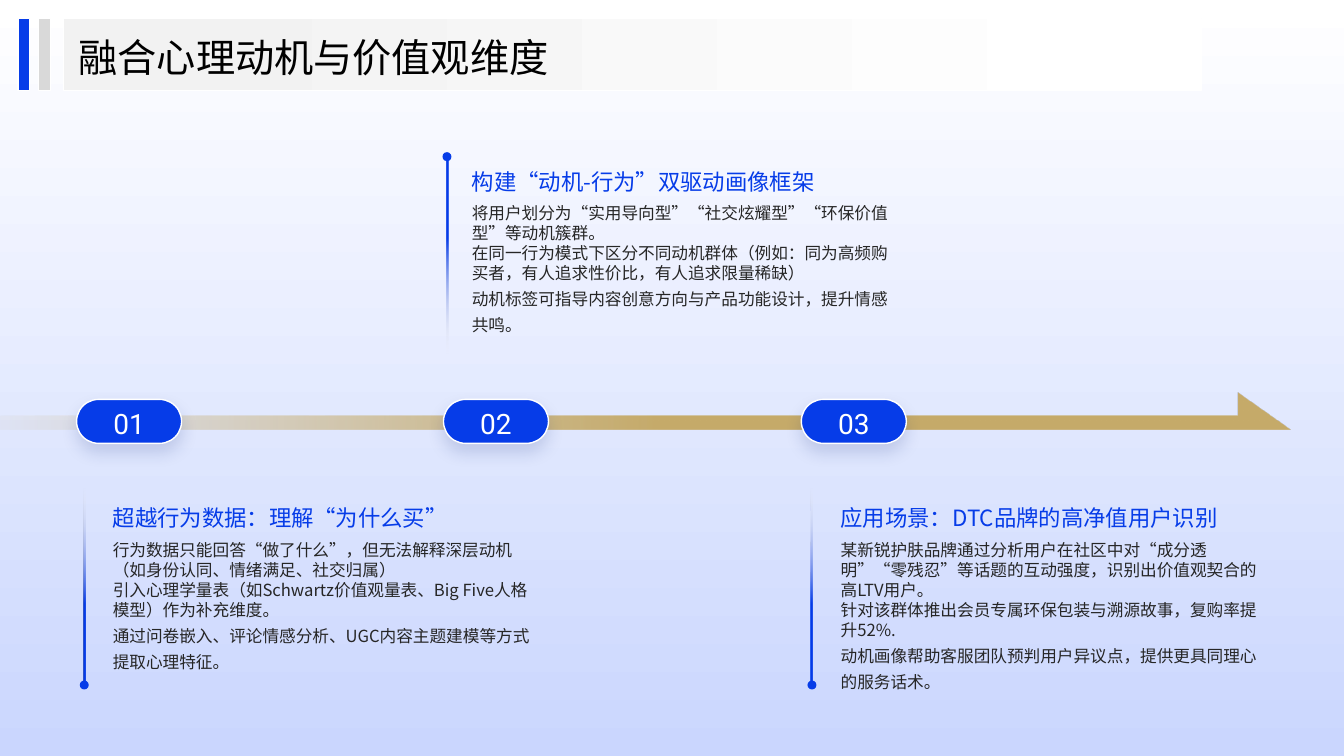
from lxml import etree
from pptx import Presentation
from pptx import util as u
from pptx.dml.color import RGBColor
from pptx.enum import shapes, text
from pptx.oxml.ns import qn

COLORS = {"blue": "063CE8", "gold": "C6AB6A", "white": "FFFFFF", "sky": "CAD6FE",
          "cream": "F4EEE1", "pale": "F2F2F2", "gray": "D9D9D9", "ink": "262626",
          "black": "000000", "shade": "031E74"}
HAN, NUM = "Noto Sans CJK SC", "Roboto"

STEPS = [
    ("01", 54.7, 60.2, 80.6, False, "超越行为数据：理解“为什么买”",
     ["行为数据只能回答“做了什么”，但无法解释深层动机（如身份认同、情绪满足、社交归属）",
      "引入心理学量表（如Schwartz价值观量表、Big Five人格模型）作为补充维度。",
      "通过问卷嵌入、评论情感分析、UGC内容主题建模等方式提取心理特征。"]),
    ("02", 316.8, 319.3, 337, True, "构建“动机-行为”双驱动画像框架",
     ["将用户划分为“实用导向型”“社交炫耀型”“环保价值型”等动机簇群。",
      "在同一行为模式下区分不同动机群体（例如：同为高频购买者，有人追求性价比，有人追求限量稀缺）",
      "动机标签可指导内容创意方向与产品功能设计，提升情感共鸣。"]),
    ("03", 572.4, 580, 600.5, False, "应用场景：DTC品牌的高净值用户识别",
     ["某新锐护肤品牌通过分析用户在社区中对“成分透明”“零残忍”等话题的互动强度，识别出价值观契合的高LTV用户。",
      "针对该群体推出会员专属环保包装与溯源故事，复购率提升52%.",
      "动机画像帮助客服团队预判用户异议点，提供更具同理心的服务话术。"]),
]


class Deck:
    """Draws styled elements on the current slide, with lengths in points."""

    def __init__(self, width, height):
        self.prs = Presentation()
        self.prs.slide_width, self.prs.slide_height = u.Pt(width), u.Pt(height)
        self.s = self.prs.slides.add_slide(self.prs.slide_layouts[6])

    def rgb(self, name):
        return RGBColor.from_string(COLORS[name])

    def paint(self, sp, fill, line=None):
        sp.shadow.inherit = False
        sp.fill.solid()
        sp.fill.fore_color.rgb = self.rgb(fill)
        if line:
            sp.line.color.rgb = self.rgb(line)
            sp.line.width = u.Pt(1)
        else:
            sp.line.fill.background()

    def shape(self, kind, x, y, w, h, fill, line=None):
        sp = self.s.shapes.add_shape(kind, u.Pt(x), u.Pt(y), u.Pt(w), u.Pt(h))
        self.paint(sp, fill, line)
        return sp

    def rect(self, x, y, w, h, fill, line=None):
        return self.shape(shapes.MSO_SHAPE.RECTANGLE, x, y, w, h, fill, line)

    def polygon(self, points, fill):
        pts = [(u.Pt(x), u.Pt(y)) for x, y in points]
        fb = self.s.shapes.build_freeform(*pts[0], scale=1.0)
        fb.add_line_segments(pts[1:], close=True)
        sp = fb.convert_to_shape()
        self.paint(sp, fill)
        return sp

    def gradient(self, sp, stops, angle=0, clear=None):
        sp.fill.gradient()
        sp.fill.gradient_angle = angle
        for i, (stop, (pos, color)) in enumerate(zip(sp.fill.gradient_stops, stops)):
            stop.position = pos
            stop.color.rgb = self.rgb(color)
            if i == clear:
                clr = sp.fill._xPr.findall(".//" + qn("a:srgbClr"))[i]
                etree.SubElement(clr, qn("a:alpha"), val="0")

    def pill(self, x, y, w, h):
        sp = self.shape(shapes.MSO_SHAPE.ROUNDED_RECTANGLE, x, y, w, h, "blue", "white")
        sp.adjustments[0] = 0.5
        effects = sp._element.spPr.find(qn("a:effectLst"))
        shadow = etree.SubElement(effects, qn("a:outerShdw"), blurRad=str(u.Pt(12)),
                                  dist=str(u.Pt(6)), dir="5400000", algn="t", rotWithShape="0")
        clr = etree.SubElement(shadow, qn("a:srgbClr"), val=COLORS["shade"])
        etree.SubElement(clr, qn("a:alpha"), val="15000")

    def label(self, x, y, w, h, lines, size, color, font=HAN, anchor="TOP",
              spacing=1.0, last=None, inset=True, center=False):
        tf = self.s.shapes.add_textbox(u.Pt(x), u.Pt(y), u.Pt(w), u.Pt(h)).text_frame
        tf.word_wrap = True
        tf.vertical_anchor = text.MSO_ANCHOR[anchor]
        if not inset:
            tf.margin_left = tf.margin_right = tf.margin_top = tf.margin_bottom = 0
        tf.text = "\n".join(lines)
        for p in tf.paragraphs:
            p.line_spacing = spacing
            if center:
                p.alignment = text.PP_ALIGN.CENTER
            for r in p.runs:
                r.font.size = u.Pt(size)
                r.font.color.rgb = self.rgb(color)
                r.font.name = font
                etree.SubElement(r.font._element, qn("a:ea"), typeface=font)
        if last:
            tf.paragraphs[-1].line_spacing = last

    def marker(self, x, dot_y, above):
        mid = dot_y + (71 if above else -71)
        bar = self.rect(x - 69.5, mid - 0.7, 139, 1.4, "blue")
        bar.rotation = 90 if above else 270
        self.gradient(bar, [(0.41, "blue"), (1, "cream")], clear=1)
        self.shape(shapes.MSO_SHAPE.OVAL, x - 3.2, dot_y - 3.2, 6.4, 6.4, "blue")

    def step(self, number, pill_x, marker_x, text_x, above, title, body):
        self.pill(pill_x, 285.3, 75, 31.4)
        self.label(pill_x + 10, 284.4, 55, 33.1, [number], 20, "white", NUM,
                   "MIDDLE", 1.1, center=True)
        self.marker(marker_x, 111.9 if above else 489.3, above)
        top = 100.8 if above else 341.4
        self.label(text_x, top, 300, 38.2, [title], 16, "blue", anchor="BOTTOM", inset=False)
        self.label(text_x, top + 44.3, 300, 105, body, 11.9, "ink", last=1.3, inset=False)


def main():
    d = Deck(960, 540)
    d.gradient(d.rect(0, 0, 960, 540, "white"), [(0, "white"), (1, "sky")], 270)
    arrow = d.polygon([(883.4, 280.8), (921.6, 307), (-29.5, 307),
                       (-29.5, 296.9), (883.4, 296.9)], "gold")
    d.gradient(arrow, [(0, "gold"), (0.53, "gold")], clear=0)
    for step in STEPS:
        d.step(*step)
    banner = d.rect(45.4, 13.2, 812.9, 51.3, "pale", "white")
    d.gradient(banner, [(0.1, "pale"), (0.93, "white")])
    d.label(56.2, 20.9, 597.6, 36.7, ["融合心理动机与价值观维度"], 28, "black",
            anchor="MIDDLE", spacing=1.1, inset=False)
    for x, color in ((12.8, "blue"), (27.6, "gray")):
        d.rect(x, 13.2, 8.4, 51.3, color, "white")
    d.prs.save("out.pptx")


if __name__ == "__main__":
    main()
